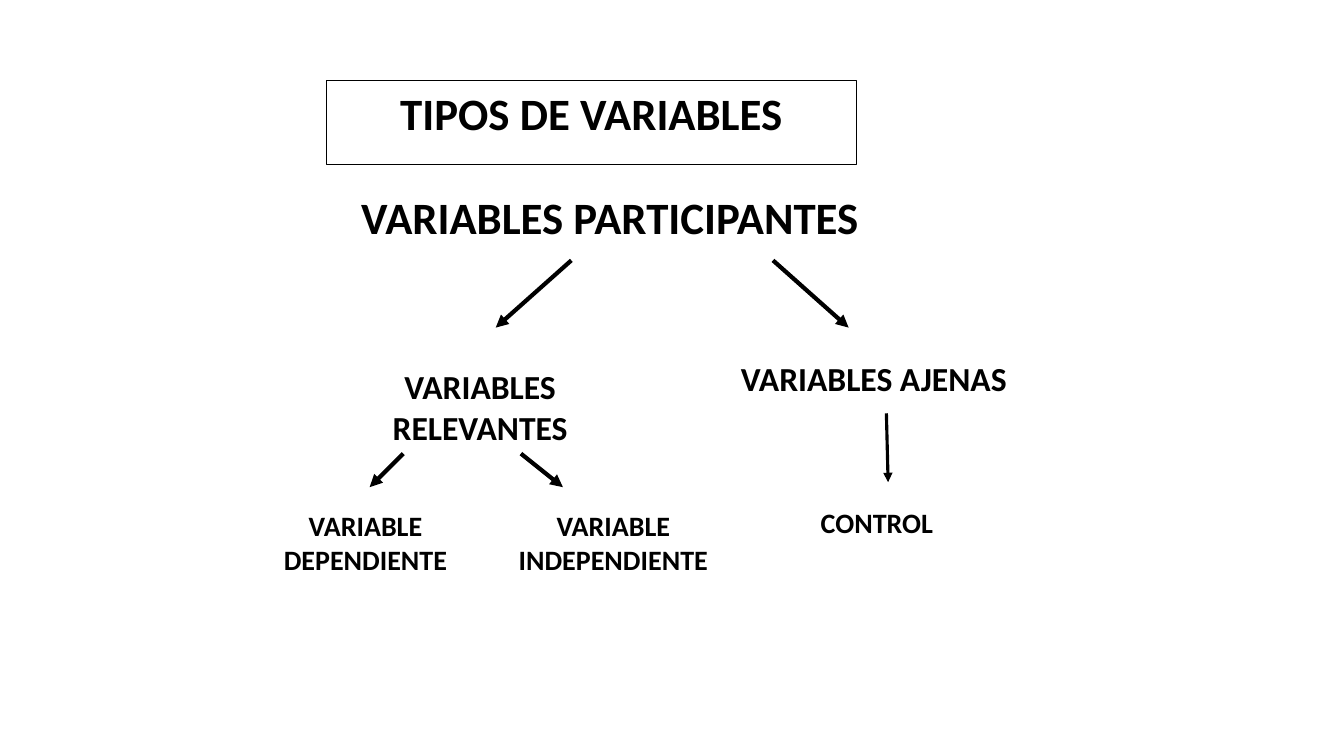
from lxml.etree import SubElement
from pptx import Presentation
from pptx.dml.color import RGBColor
from pptx.enum.shapes import MSO_CONNECTOR as CONN
from pptx.enum.text import MSO_ANCHOR as ANCHOR, MSO_AUTO_SIZE as FIT, PP_ALIGN as AL
from pptx.oxml.ns import qn
from pptx.util import Inches, Pt

COLORS = {"ink": RGBColor.from_string("000000")}
COLS, ROWS = 160, 90  # square grid cells, twelve to the inch

prs = Presentation()
prs.slide_width, prs.slide_height = Inches(13.33), Inches(7.5)
s = prs.slides.add_slide(prs.slide_layouts[5])


def cells(*lengths):
    return [round(n * prs.slide_height / ROWS) for n in lengths]


def write(sp, text, size, align):
    tf = sp.text_frame
    tf.text = text
    tf.word_wrap = True
    tf.auto_size = FIT.SHAPE_TO_FIT_TEXT
    tf.vertical_anchor = ANCHOR.TOP
    p = tf.paragraphs[0]
    p.alignment = align
    font = p.runs[0].font
    font.name, font.size, font.bold = "Calibri", Pt(size), True
    font.color.rgb = COLORS["ink"]


# Framed title
title = s.shapes.title
title.left, title.top, title.width, title.height = cells(38.8, 9.6, 63.2, 7.6)
title.line.color.rgb = COLORS["ink"]
title.line.width = Pt(0.75)
write(title, "TIPOS DE VARIABLES", 32, AL.CENTER)

# Tree labels: text, size, alignment, column, row, width, height
labels = [
    ("VARIABLES PARTICIPANTES", 32, AL.LEFT, 41.8, 22, 85.2, 7.6),
    ("VARIABLES RELEVANTES", 24, AL.CENTER, 37.3, 43, 39.7, 10.9),
    ("VARIABLES AJENAS", 24, AL.LEFT, 87, 42, 37, 6),
    ("VARIABLE DEPENDIENTE", 20, AL.CENTER, 31, 60, 25, 9.2),
    ("VARIABLE INDEPENDIENTE", 20, AL.CENTER, 59, 60, 28, 9.2),
    ("CONTROL", 20, AL.LEFT, 96.5, 59.6, 21.2, 5.3),
]
for text, size, align, *box in labels:
    write(s.shapes.add_textbox(*cells(*box)), text, size, align)

# Branch arrows: line width, start column and row, end column and row
arrows = [
    (3, 68, 31, 59, 39),
    (3, 92, 31, 101, 39),
    (3, 48, 54, 44, 58),
    (3, 62, 54, 67, 58),
    (2.25, 105.5, 49.2, 105.7, 57.4),
]
for width, *ends in arrows:
    arrow = s.shapes.add_connector(CONN.STRAIGHT, *cells(*ends))
    arrow.line.color.rgb = COLORS["ink"]
    arrow.line.width = Pt(width)
    SubElement(arrow.line._get_or_add_ln(), qn("a:tailEnd"), type="triangle")
    SubElement(arrow._element.spPr, qn("a:effectLst"))

prs.save("out.pptx")
